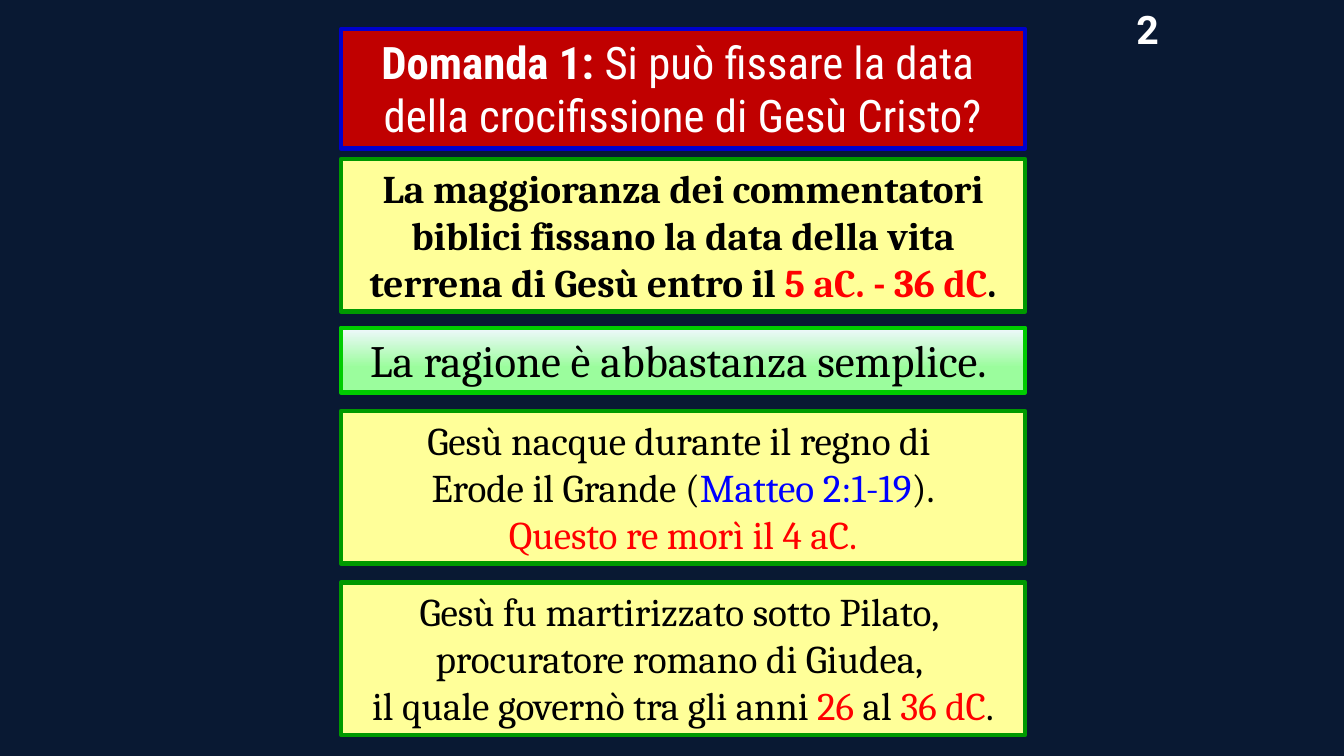
from pptx import Presentation
from pptx.dml.color import RGBColor
from pptx.enum.shapes import MSO_SHAPE
from pptx.enum.text import MSO_ANCHOR, MSO_AUTO_SIZE, PP_ALIGN
from pptx.util import Cm, Pt

NAVY = RGBColor(0x09, 0x19, 0x33)
WHITE = RGBColor(0xFF, 0xFF, 0xFF)
BLACK = RGBColor(0x00, 0x00, 0x00)
RED = RGBColor(0xFF, 0x00, 0x00)
BLUE = RGBColor(0x00, 0x00, 0xFF)
DARK_RED = RGBColor(0xC0, 0x00, 0x00)
DARK_BLUE = RGBColor(0x00, 0x00, 0xCC)
YELLOW = RGBColor(0xFF, 0xFF, 0x99)
GREEN = RGBColor(0x00, 0x99, 0x00)
BRIGHT_GREEN = RGBColor(0x00, 0xCC, 0x00)
ICE = RGBColor(0xF1, 0xF8, 0xFE)
MINT = RGBColor(0x9B, 0xFD, 0x9D)

BOX_LEFT, BOX_WIDTH = Cm(8.59), Cm(17.25)


def write(sp, paragraphs, font, size):
    """Fill a shape with paragraphs, each a list of (text, colour, bold) runs."""
    tf = sp.text_frame
    tf.word_wrap = True
    tf.auto_size = MSO_AUTO_SIZE.SHAPE_TO_FIT_TEXT
    tf.vertical_anchor = MSO_ANCHOR.TOP
    for i, runs in enumerate(paragraphs):
        p = tf.add_paragraph() if i else tf.paragraphs[0]
        p.alignment = PP_ALIGN.CENTER
        for text, color, bold in runs:
            r = p.add_run()
            r.text = text
            r.font.name = font
            r.font.size = Pt(size)
            r.font.bold = bold
            r.font.color.rgb = color


def frame(sp, top, height, line_color):
    sp.left, sp.top, sp.width, sp.height = BOX_LEFT, Cm(top), BOX_WIDTH, Cm(height)
    sp.line.color.rgb = line_color
    sp.line.width = Pt(3)


prs = Presentation()
prs.slide_width, prs.slide_height = Cm(33.87), Cm(19.05)
s = prs.slides.add_slide(prs.slide_layouts[5])
s.background.fill.solid()
s.background.fill.fore_color.rgb = NAVY

title = s.shapes.title
frame(title, 0.74, 3, DARK_BLUE)
title.fill.solid()
title.fill.fore_color.rgb = DARK_RED
write(title, [
    [("Domanda 1: ", WHITE, True), ("Si può fissare la data ", WHITE, False)],
    [("della crocifissione di Gesù Cristo?", WHITE, False)],
], "Roboto Condensed", 32)

# top, height, line colour, text size, paragraphs
boxes = [
    (4.01, 3.84, GREEN, 28, [
        [("La maggioranza dei commentatori biblici fissano la data della vita "
          "terrena di Gesù entro il ", BLACK, True),
         ("5 aC. - 36 dC", RED, True), (".", BLACK, True)],
    ]),
    (8.26, 1.63, BRIGHT_GREEN, 32, [
        [("La ragione è abbastanza semplice. ", BLACK, False)],
    ]),
    (10.36, 3.84, GREEN, 28, [
        [("Gesù nacque durante il regno di ", BLACK, False)],
        [("Erode il Grande (", BLACK, False), ("Matteo 2:1-19", BLUE, False),
         (").", BLACK, False)],
        [("Questo re morì il 4 aC.", RED, False)],
    ]),
    (14.68, 3.84, GREEN, 28, [
        [("Gesù fu martirizzato sotto Pilato, ", BLACK, False)],
        [("procuratore romano di Giudea, ", BLACK, False)],
        [("il quale governò tra gli anni ", BLACK, False), ("26 ", RED, False),
         ("al ", BLACK, False), ("36 dC", RED, False), (".", BLACK, False)],
    ]),
]
for top, height, line_color, size, paragraphs in boxes:
    sp = s.shapes.add_shape(MSO_SHAPE.RECTANGLE, BOX_LEFT, Cm(top), BOX_WIDTH, Cm(height))
    sp.shadow.inherit = False
    frame(sp, top, height, line_color)
    if line_color == BRIGHT_GREEN:
        sp.fill.gradient()
        sp.fill.gradient_angle = 270
        for stop, color, position in zip(sp.fill.gradient_stops, (ICE, MINT), (0, 0.61)):
            stop.color.rgb = color
            stop.position = position
    else:
        sp.fill.solid()
        sp.fill.fore_color.rgb = YELLOW
    write(sp, paragraphs, "Cambria", size)

number = s.shapes.add_textbox(Cm(28.35), Cm(0), Cm(1.14), Cm(1.45))
write(number, [[("2", WHITE, True)]], "Roboto", 28)
number.text_frame.word_wrap = False

prs.save("out.pptx")
